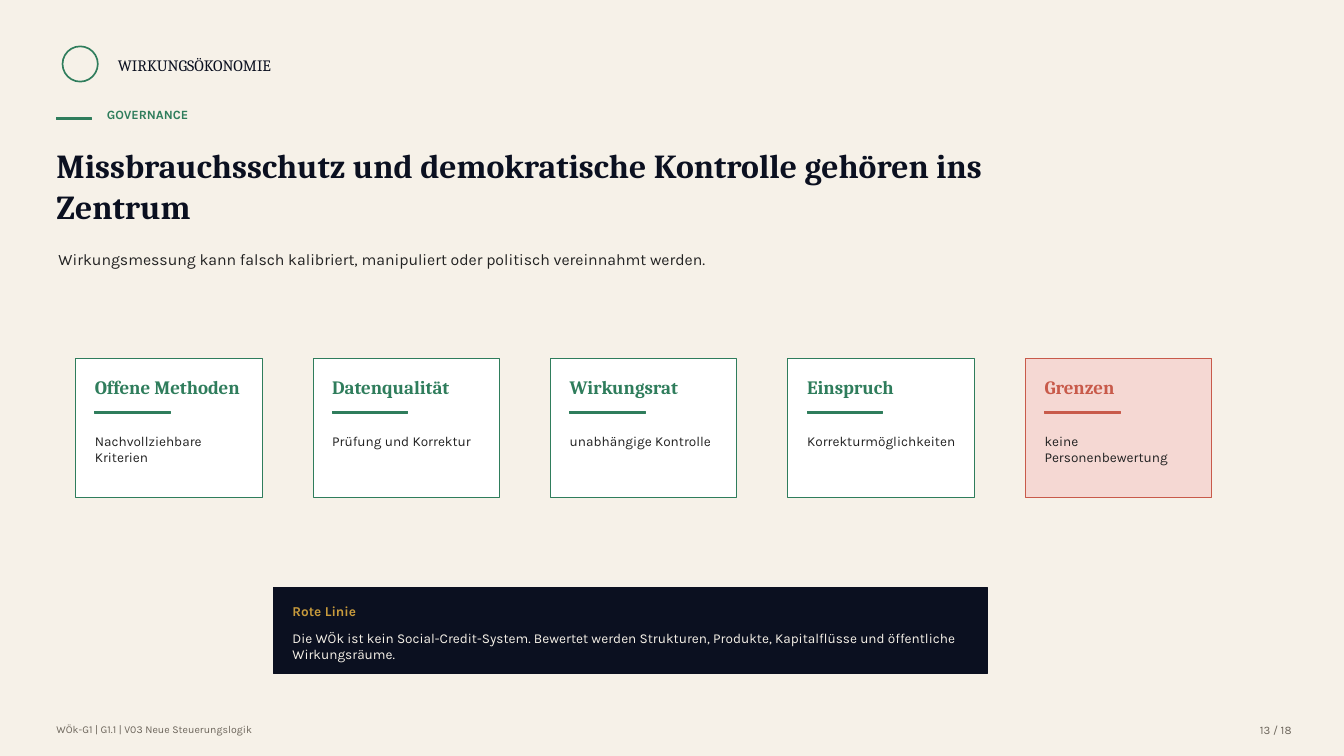
from pptx import Presentation
from pptx.dml.color import RGBColor
from pptx.enum.shapes import MSO_SHAPE
from pptx.enum.text import PP_ALIGN
from pptx.util import Inches, Pt

INK, GREEN, GOLD, RED = "0B1020", "2F7D5C", "C89B3C", "C85A4A"
CREAM, WHITE, ROSE, BODY, MUTED = "F6F1E8", "FFFFFF", "F5D8D3", "222222", "6C655B"
SERIF, SANS = "Cambria", "Karla"
LEAD_SIZE, DETAIL_SIZE = 11.3, 9.7

prs = Presentation()
prs.slide_width, prs.slide_height = Inches(13.33), Inches(7.5)
slide = prs.slides.add_slide(prs.slide_layouts[6])
slide.background.fill.solid()
slide.background.fill.fore_color.rgb = RGBColor.from_string(CREAM)


def add_block(box, fill, line, line_width=0.75, kind=MSO_SHAPE.RECTANGLE):
    """Draw a shape; box is left, top, width, height in inches, fill None means hollow."""
    block = slide.shapes.add_shape(kind, *map(Inches, box))
    block.shadow.inherit = False
    if fill:
        block.fill.solid()
        block.fill.fore_color.rgb = RGBColor.from_string(fill)
    else:
        block.fill.background()
    block.line.color.rgb = RGBColor.from_string(line)
    block.line.width = Pt(line_width)


def add_label(box, text, size, font, color, bold=False, align=PP_ALIGN.LEFT):
    frame = slide.shapes.add_textbox(*map(Inches, box)).text_frame
    frame_format = {"word_wrap": True, "margin_left": 0, "margin_right": 0,
                    "margin_top": 0, "margin_bottom": 0}
    for name, value in frame_format.items():
        setattr(frame, name, value)
    paragraph = frame.paragraphs[0]
    paragraph.alignment = align
    run = paragraph.add_run()
    run.text = text
    for name, value in {"size": Pt(size), "name": font, "bold": bold}.items():
        setattr(run.font, name, value)
    run.font.color.rgb = RGBColor.from_string(color)


# Header
add_block((0.62, 0.46, 0.35, 0.35), None, GREEN, 1.2, MSO_SHAPE.OVAL)
add_label((1.17, 0.55, 2.6, 0.23), "WIRKUNGSÖKONOMIE", LEAD_SIZE, SERIF, INK)
add_block((0.56, 1.17, 0.35, 0.02), GREEN, GREEN, 0)
add_label((1.06, 1.06, 4.79, 0.25), "GOVERNANCE", 9, SANS, GREEN, bold=True)
add_label((0.56, 1.44, 9.69, 0.94),
          "Missbrauchsschutz und demokratische Kontrolle gehören ins Zentrum",
          24, SERIF, INK, bold=True)
add_label((0.58, 2.48, 8.75, 0.44),
          "Wirkungsmessung kann falsch kalibriert, manipuliert oder politisch "
          "vereinnahmt werden.", LEAD_SIZE, SANS, BODY)

# Safeguard cards
safeguards = [
    ("Offene Methoden", "Nachvollziehbare Kriterien", GREEN, WHITE),
    ("Datenqualität", "Prüfung und Korrektur", GREEN, WHITE),
    ("Wirkungsrat", "unabhängige Kontrolle", GREEN, WHITE),
    ("Einspruch", "Korrekturmöglichkeiten", GREEN, WHITE),
    ("Grenzen", "keine Personenbewertung", RED, ROSE),
]
first_left, last_left = 0.75, 10.17
card_pitch = (last_left - first_left) / (len(safeguards) - 1)
for index, (heading, detail, accent, fill) in enumerate(safeguards):
    card_left = first_left + index * card_pitch
    inner_left = card_left + 0.19
    add_block((card_left, 3.56, 1.85, 1.38), fill, accent)
    add_label((inner_left, 3.73, 1.55, 0.25), heading, 13.5, SERIF, accent, bold=True)
    add_block((inner_left, 4.08, 0.75, 0.02), accent, accent, 0)
    add_label((inner_left, 4.29, 1.55, 0.48), detail, DETAIL_SIZE, SANS, BODY)

# Red line statement
add_block((2.71, 5.83, 7.08, 0.85), INK, INK)
add_label((2.9, 5.98, 6.71, 0.25), "Rote Linie", DETAIL_SIZE, SANS, GOLD, bold=True)
add_label((2.9, 6.25, 6.71, 0.35),
          "Die WÖk ist kein Social-Credit-System. Bewertet werden Strukturen, Produkte, "
          "Kapitalflüsse und öffentliche Wirkungsräume.", DETAIL_SIZE, SANS, CREAM)

# Footer
add_label((0.56, 7.17, 5.83, 0.19), "WÖk-G1 | G1.1 | V03 Neue Steuerungslogik",
          7.5, SANS, MUTED)
add_label((12.08, 7.17, 0.73, 0.19), "13 / 18", 8.2, SANS, MUTED, align=PP_ALIGN.RIGHT)

prs.save("out.pptx")
